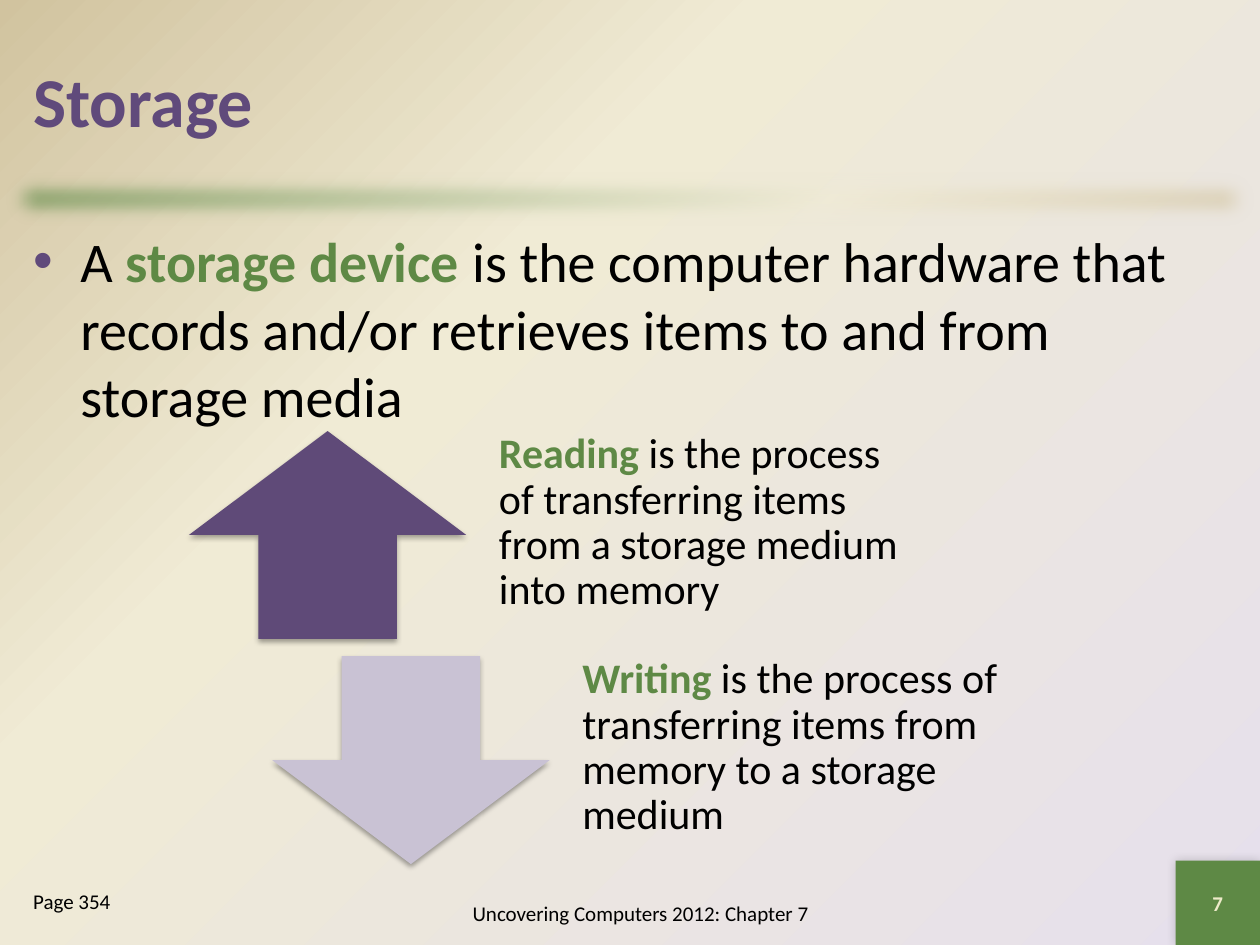
from dataclasses import dataclass

from lxml import etree
from pptx import Presentation
from pptx import util as u
from pptx.dml.color import RGBColor
from pptx.enum import shapes, text
from pptx.oxml import ns

GREEN = RGBColor(0x5E, 0x89, 0x45)
PURPLE = RGBColor(0x60, 0x4A, 0x7B)
DARK_PURPLE = RGBColor(0x5F, 0x4A, 0x78)
PALE_PURPLE = RGBColor(0xC9, 0xC2, 0xD4)
LAVENDER = RGBColor(0xE6, 0xE0, 0xEC)
CREAM = RGBColor(0xF0, 0xEB, 0xD5)
TAN = RGBColor(0xD1, 0xC3, 0x9F)
PALE_YELLOW = RGBColor(0xEE, 0xEB, 0xCA)
BLACK = RGBColor(0, 0, 0)
FONT = "Calibri"


@dataclass
class Box:
    left: float
    top: float
    width: float
    height: float

    def lengths(self) -> list:
        return [u.Cm(value) for value in (self.left, self.top, self.width, self.height)]


@dataclass
class Run:
    words: str
    size: float
    color: RGBColor = BLACK
    bold: bool = False


@dataclass
class Shadow:
    opacity: int
    blur: float
    distance: float
    angle: int


@dataclass
class Process:
    arrow: shapes.MSO_SHAPE
    color: RGBColor
    left: float
    top: float
    term: str
    meaning: str


ARROW_SHADOW = Shadow(35, 3.1, 1.8, 90)
BADGE_SHADOW = Shadow(20, 6, 0, 225)
PROCESSES = [
    Process(shapes.MSO_SHAPE.UP_ARROW, DARK_PURPLE, 3.81, 8.69, "Reading",
            " is the process of transferring items from a storage medium into memory"),
    Process(shapes.MSO_SHAPE.DOWN_ARROW, PALE_PURPLE, 5.49, 13.23, "Writing",
            " is the process of transferring items from memory to a storage medium"),
]


def add_element(parent, tag: str, **attributes):
    element = etree.SubElement(parent, ns.qn(tag))
    for name, value in attributes.items():
        element.set(name, str(value))
    return element


def set_gradient(properties, first: RGBColor):
    """Swap the solid fill for a blend from first through cream to tan."""
    solid = properties.find(ns.qn("a:solidFill"))
    gradient = etree.Element(ns.qn("a:gradFill"), rotWithShape="1")
    stops = add_element(gradient, "a:gsLst")
    for position, color in ((0, first), (65, CREAM), (100, TAN)):
        stop = add_element(stops, "a:gs", pos=position * 1000)
        add_element(stop, "a:srgbClr", val=color)
    properties.replace(solid, gradient)
    return gradient


def add_filled_shape(slide, kind: shapes.MSO_SHAPE, box: Box, color: RGBColor):
    shape = slide.shapes.add_shape(kind, *box.lengths())
    shape.fill.solid()
    shape.fill.fore_color.rgb = color
    shape.line.fill.background()
    shape.shadow.inherit = False
    return shape


def add_shadow(shape, shadow: Shadow) -> None:
    effects = shape.element.spPr.find(ns.qn("a:effectLst"))
    outer = add_element(effects, "a:outerShdw", blurRad=u.Pt(shadow.blur),
                        dist=u.Pt(shadow.distance), dir=shadow.angle * 60000,
                        rotWithShape=0)
    color = add_element(outer, "a:srgbClr", val=BLACK)
    add_element(color, "a:alpha", val=shadow.opacity * 1000)


def add_text(slide, box: Box, runs: list[Run], anchor=text.MSO_ANCHOR.TOP,
             align=text.PP_ALIGN.LEFT):
    frame = slide.shapes.add_textbox(*box.lengths()).text_frame
    frame.word_wrap = True
    frame.vertical_anchor = anchor
    paragraph = frame.paragraphs[0]
    paragraph.alignment = align
    for item in runs:
        run = paragraph.add_run()
        run.text = item.words
        run.font.name = FONT
        run.font.size = u.Pt(item.size)
        run.font.bold = item.bold
        run.font.color.rgb = item.color
    return frame


def add_bullet(paragraph, color: RGBColor) -> None:
    properties = paragraph._p.get_or_add_pPr()
    properties.set("marL", str(u.Cm(0.95)))
    properties.set("indent", str(-u.Cm(0.95)))
    add_element(add_element(properties, "a:buClr"), "a:srgbClr", val=color)
    add_element(properties, "a:buFont", typeface="Arial")
    add_element(properties, "a:buChar", char="•")


def add_process(slide, process: Process) -> None:
    """Draw an arrow with its definition to the right."""
    box = Box(process.left, process.top, 5.59, 4.19)
    add_shadow(add_filled_shape(slide, process.arrow, box, process.color), ARROW_SHADOW)
    frame = add_text(slide, Box(box.left + 5.77, box.top, 9.47, box.height),
                     [Run(process.term, 24, GREEN, True), Run(process.meaning, 24)],
                     text.MSO_ANCHOR.MIDDLE)
    frame.margin_left = frame.margin_right = frame.margin_bottom = u.Cm(0.48)
    frame.margin_top = 0
    frame.paragraphs[0].line_spacing = 0.9
    frame.paragraphs[0].space_after = u.Pt(8.4)


def add_backdrop(slide) -> None:
    slide.background.fill.solid()
    gradient = set_gradient(slide.element.xpath(".//p:bgPr")[0], LAVENDER)
    circle = add_element(gradient, "a:path", path="circle")
    add_element(circle, "a:fillToRect", l=100000, t=100000)
    add_element(gradient, "a:tileRect", r=-100000, b=-100000)

    bar = add_filled_shape(slide, shapes.MSO_SHAPE.RECTANGLE,
                           Box(0, 3.38, 25.4, 1.27), GREEN)
    properties = bar.element.spPr
    add_element(set_gradient(properties, GREEN), "a:lin", ang=45 * 60000, scaled=0)
    add_element(properties.find(ns.qn("a:effectLst")), "a:softEdge", rad=u.Pt(12.5))


def main() -> None:
    presentation = Presentation()
    presentation.slide_width, presentation.slide_height = u.Cm(25.4), u.Cm(19.05)
    slide = presentation.slides.add_slide(presentation.slide_layouts[6])
    middle, center = text.MSO_ANCHOR.MIDDLE, text.PP_ALIGN.CENTER

    add_backdrop(slide)
    badge = Box(23.7, 17.35, 1.7, 1.7)
    add_shadow(add_filled_shape(slide, shapes.MSO_SHAPE.RECTANGLE, badge, GREEN),
               BADGE_SHADOW)

    add_text(slide, Box(0.42, 0.42, 24.56, 3.18), [Run("Storage", 40, PURPLE, True)], middle)
    body = add_text(slide, Box(0.42, 4.45, 24.56, 12.9), [
        Run("A ", 32),
        Run("storage device ", 32, GREEN, True),
        Run("is the computer hardware that records and/or retrieves items "
            "to and from storage media", 32),
    ])
    body.paragraphs[0].space_before = u.Pt(6.4)
    add_bullet(body.paragraphs[0], PURPLE)

    add_text(slide, Box(7.62, 17.78, 10.59, 1.27),
             [Run("Uncovering Computers 2012: Chapter 7", 12)], middle, center)
    add_text(slide, badge, [Run("7", 12, PALE_YELLOW, True)], middle, center)
    page = add_text(slide, Box(0.42, 17.78, 4.65, 1.27), [Run("Page 354", 12)])
    page.paragraphs[0].space_before = u.Pt(2.4)

    for process in PROCESSES:
        add_process(slide, process)
    presentation.save("out.pptx")


if __name__ == "__main__":
    main()
